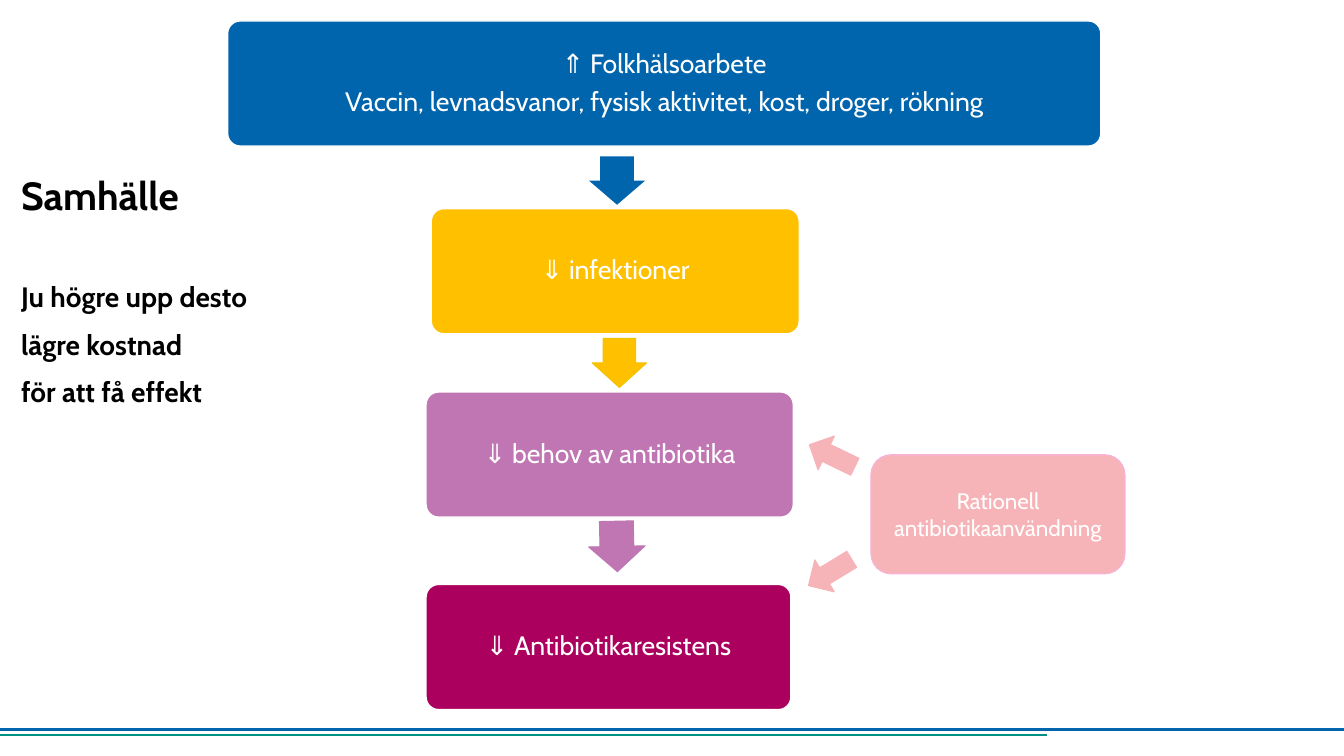
from lxml.etree import SubElement
from pptx import Presentation
from pptx.dml.color import RGBColor
from pptx.enum.shapes import MSO_CONNECTOR, MSO_SHAPE
from pptx.enum.text import MSO_ANCHOR, MSO_AUTO_SIZE, PP_ALIGN
from pptx.oxml.ns import qn
from pptx.util import Cm, Pt

FONT = "Cabin"
COLOURS = {
    "blue": "0065AC", "teal": "009185", "yellow": "FFC000", "gold": "F1C300",
    "purple": "BF76B3", "magenta": "AC005F", "pink": "F7B4B8",
    "rose": "F7B2D8", "white": "FFFFFF", "black": "000000",
}


def colour(name):
    """Return the named palette colour."""
    return RGBColor.from_string(COLOURS[name])


def write(paragraph, text, size=19, ink="white", bold=False,
          align=PP_ALIGN.CENTER, spacing=None, before=0, after=0):
    """Put formatted text into a paragraph, with line breaks at newlines."""
    paragraph.alignment = align
    paragraph.line_spacing = spacing
    paragraph.space_before, paragraph.space_after = Pt(before), Pt(after)
    for index, line in enumerate(text.split("\n")):
        if index:
            paragraph.add_line_break()
        run = paragraph.add_run()
        run.text = line
        run.font.name, run.font.size, run.font.bold = FONT, Pt(size), bold
        run.font.color.rgb = colour(ink)


class FlowSlide:
    """Hold the current slide and draw its kinds of element."""

    def __init__(self, presentation):
        """Add a slide with only a title."""
        self.slide = presentation.slides.add_slide(presentation.slide_layouts[5])

    def title(self, heading, message, left, top, width, height):
        """Fill the title placeholder with a heading and a message."""
        shape = self.slide.shapes.title
        shape.left, shape.top = Cm(left), Cm(top)
        shape.width, shape.height = Cm(width), Cm(height)
        frame = shape.text_frame
        frame.auto_size, frame.word_wrap = MSO_AUTO_SIZE.NONE, True
        frame.vertical_anchor = MSO_ANCHOR.BOTTOM
        frame.margin_left = frame.margin_right = 0
        frame.margin_top = frame.margin_bottom = 0
        style = {"ink": "black", "bold": True, "align": PP_ALIGN.LEFT, "spacing": Pt(34)}
        write(frame.paragraphs[0], heading, size=28, **style)
        write(frame.add_paragraph(), message, size=20, before=34, **style)

    def rule(self, top, length, ink):
        """Draw a horizontal footer line from the left edge."""
        line = self.slide.shapes.add_connector(
            MSO_CONNECTOR.STRAIGHT, 0, Cm(top), Cm(length), Cm(top))
        line.line.color.rgb = colour(ink)
        line.line.width = Pt(2)
        SubElement(line._element.spPr, qn("a:effectLst"))

    def shape(self, kind, box, fill, outline, weight, adjustments=()):
        """Draw a filled preset shape."""
        shape = self.slide.shapes.add_shape(kind, *map(Cm, box))
        shape.shadow.inherit = False
        shape.fill.solid()
        shape.fill.fore_color.rgb = colour(fill)
        if outline:
            shape.line.color.rgb = colour(outline)
            shape.line.width = Pt(weight)
        else:
            shape.line.fill.background()
        for index, value in enumerate(adjustments):
            shape.adjustments[index] = value
        return shape

    def card(self, lines, box, fill, outline="white", corner=0.1, margin=0.28, **style):
        """Draw a rounded box with centred lines of text."""
        shape = self.shape(MSO_SHAPE.ROUNDED_RECTANGLE, box, fill, outline, 0.85, [corner])
        frame = shape.text_frame
        frame.word_wrap, frame.vertical_anchor = True, MSO_ANCHOR.MIDDLE
        frame.margin_left = frame.margin_right = Cm(margin)
        for index, line in enumerate(lines):
            paragraph = frame.add_paragraph() if index else frame.paragraphs[0]
            write(paragraph, line, **style)

    def arrow(self, kind, box, rotation, fill, outline, weight=0.75, adjustments=()):
        """Draw a rotated block arrow."""
        self.shape(kind, box, fill, outline, weight, adjustments).rotation = rotation


def main():
    """Build and save the presentation."""
    presentation = Presentation()
    presentation.slide_width, presentation.slide_height = Cm(33.87), Cm(19.05)
    flow = FlowSlide(presentation)
    flow.rule(18.39, 33.87, "blue")
    flow.rule(18.52, 26.39, "teal")
    flow.title("Samhälle", "Ju högre upp desto\nlägre kostnad\nför att få effekt",
               0.53, 7.7, 28.8, 2.59)

    steps = [
        (["⇑ Folkhälsoarbete",
          "Vaccin, levnadsvanor, fysisk aktivitet, kost, droger, rökning"],
         5.74, 0.53, 22, "blue"),
        (["⇓ infektioner"], 10.87, 5.26, 9.27, "yellow"),
        (["⇓ behov av antibiotika"], 10.74, 9.88, 9.25, "purple"),
        (["⇓ Antibiotikaresistens"], 10.74, 14.73, 9.19, "magenta"),
    ]
    for lines, left, top, width, fill in steps:
        flow.card(lines, (left, top, width, 3.15), fill, spacing=0.9, after=6.65)

    step_arrows = [
        ((14.94, 3.84, 1.22, 1.42), 90, "blue", None),
        ((14.99, 8.46, 1.24, 1.37), 90, "yellow", "gold"),
        ((14.91, 13.06, 1.27, 1.42), 88.8, "purple", "purple"),
    ]
    for box, rotation, fill, outline in step_arrows:
        flow.arrow(MSO_SHAPE.RIGHT_ARROW, box, rotation, fill, outline,
                   adjustments=(0.6, 0.5))

    flow.card(["Rationell antibiotikaanvändning"], (21.95, 11.46, 6.4, 3), "pink",
              outline="rose", corner=0.17, margin=0.25, size=16)
    for left, top, rotation in [(20.5, 10.85, 115.8), (20.45, 13.79, 58.7)]:
        flow.arrow(MSO_SHAPE.DOWN_ARROW, (left, top, 0.94, 1.27), rotation,
                   "pink", "pink", weight=0.85)
    presentation.save("out.pptx")


if __name__ == "__main__":
    main()
